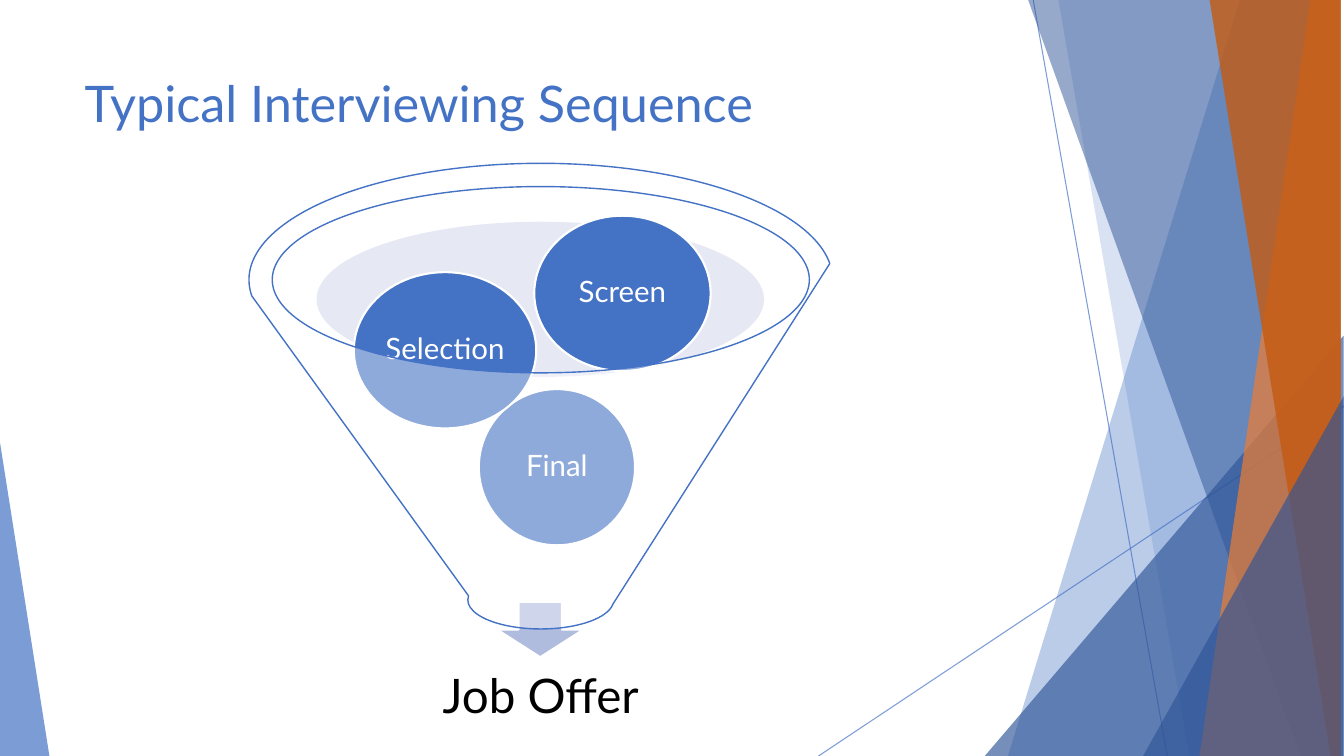
from lxml.etree import SubElement
from pptx import Presentation
from pptx.dml.color import RGBColor
from pptx.enum.shapes import MSO_CONNECTOR, MSO_SHAPE
from pptx.enum.text import MSO_ANCHOR, PP_ALIGN
from pptx.oxml.ns import qn
from pptx.util import Inches, Pt

# The page is a grid of square cells, ten to the inch
COLUMNS, ROWS = 133.33, 75
CELL = Inches(0.1)
FONT = "Lato"
COLOURS = {
    "blue": "4472C4",
    "navy": "2F5597",
    "orange": "ED7D31",
    "rust": "C55A11",
    "mist": "C1C9E4",
    "arrow": "B0BCDE",
    "white": "FFFFFF",
    "black": "000000",
}


def cells(*counts):
    return [round(count * CELL) for count in counts]


def colour(name):
    return RGBColor.from_string(COLOURS[name])


def set_opacity(shape, percent):
    for tint in shape._element.spPr.iter(qn("a:srgbClr")):
        SubElement(tint, qn("a:alpha"), val=str(percent * 1000))


def paint(shape, fill, opacity=100, line=None, line_width=1.5):
    """Fill a shape, then outline it if a line colour is given."""
    shape.shadow.inherit = False
    shape.fill.solid()
    shape.fill.fore_color.rgb = colour(fill)
    if opacity < 100:
        set_opacity(shape, opacity)
    if line:
        shape.line.color.rgb = colour(line)
        shape.line.width = Pt(line_width)
    else:
        shape.line.fill.background()


def add_preset(page, kind, place, fill, **style):
    shape = page.shapes.add_shape(kind, *cells(*place))
    paint(shape, fill, **style)
    return shape


def add_triangle(page, place, apex, fill, opacity):
    triangle = add_preset(page, MSO_SHAPE.ISOSCELES_TRIANGLE, place, fill, opacity=opacity)
    triangle.adjustments[0] = apex


def add_band(page, top, bottom, fill, opacity):
    """A slanted band from its left edge to the right edge of the page."""
    builder = page.shapes.build_freeform(top, 0, scale=CELL)
    builder.add_line_segments([(COLUMNS, 0), (COLUMNS, ROWS), (bottom, ROWS)])
    paint(builder.convert_to_shape(), fill, opacity)


def add_thin_line(page, start, end):
    line = page.shapes.add_connector(MSO_CONNECTOR.STRAIGHT, *cells(*start, *end))
    line.line.color.rgb = colour("blue")
    line.line.width = Pt(0.75)
    set_opacity(line, 70)
    SubElement(line._element.spPr, qn("a:effectLst"))


def write(box, text, size, fill, inset):
    """Centre one line of text in a box."""
    frame = box.text_frame
    frame.word_wrap = True
    frame.vertical_anchor = MSO_ANCHOR.MIDDLE
    frame.margin_left = frame.margin_right = Inches(inset)
    frame.margin_top = frame.margin_bottom = Inches(inset)
    para = frame.paragraphs[0]
    para.text = text
    para.alignment = PP_ALIGN.CENTER
    para.line_spacing = 0.9
    set_font(para, size, fill)


def set_font(para, size, fill):
    para.font.name = FONT
    para.font.size = Pt(size)
    para.font.color.rgb = colour(fill)


def add_backdrop(page):
    add_thin_line(page, (102.5, 0), (115.8, ROWS))
    add_thin_line(page, (COLUMNS, 40.3), (81.2, ROWS))
    add_band(page, 122.8, 100.4, "blue", 36)
    add_band(page, 105, 118.3, "blue", 20)
    add_triangle(page, (97.7, 33.3, 35.6, 41.7), 1, "navy", 66)
    add_band(page, 102.1, 129.1, "navy", 50)
    add_band(page, 130.3, 119.2, "orange", 70)
    add_band(page, 119.6, 131.8, "rust", 80)
    add_triangle(page, (113.4, 39.3, 19.9, 35.7), 1, "navy", 66)
    add_triangle(page, (0, 43.9, 4.9, 31.1), 0, "blue", 70)


def add_title(page, text):
    title = page.shapes.title
    title.left, title.top, title.width, title.height = cells(7.4, 6.7, 94, 14.4)
    title.text_frame.vertical_anchor = MSO_ANCHOR.TOP
    para = title.text_frame.paragraphs[0]
    para.text = text
    para.alignment = PP_ALIGN.LEFT
    set_font(para, 36, "blue")


def add_interview_funnel(page):
    add_preset(page, MSO_SHAPE.OVAL, (31.4, 22, 44.4, 15.4), "mist", opacity=40)
    add_preset(page, MSO_SHAPE.DOWN_ARROW, (49.3, 59.7, 8.6, 5.5), "arrow", line="white")

    # Result below the arrow
    result = page.shapes.add_textbox(*cells(33, 64.1, 41.3, 10.3))
    write(result, "Job Offer", 34, "black", 0.26)

    # Interview stages inside the funnel
    stages = [
        ("Final", (47.5, 38.6, 15.5, 15.5)),
        ("Selection", (35.1, 27, 18.1, 15.5)),
        ("Screen", (53, 21.4, 17.5, 15.4)),
    ]
    for name, place in stages:
        stage = add_preset(page, MSO_SHAPE.OVAL, place, "blue", line="white")
        write(stage, name, 21, "white", 0.03)

    # Translucent funnel in front
    add_preset(page, MSO_SHAPE.FUNNEL, (24.7, 16.2, 57.9, 46.2), "white",
               opacity=40, line="blue", line_width=1)


def main():
    deck = Presentation()
    deck.slide_width, deck.slide_height = cells(COLUMNS, ROWS)
    page = deck.slides.add_slide(deck.slide_layouts[5])
    add_backdrop(page)
    add_title(page, "Typical Interviewing Sequence")
    add_interview_funnel(page)
    deck.save("out.pptx")


if __name__ == "__main__":
    main()
